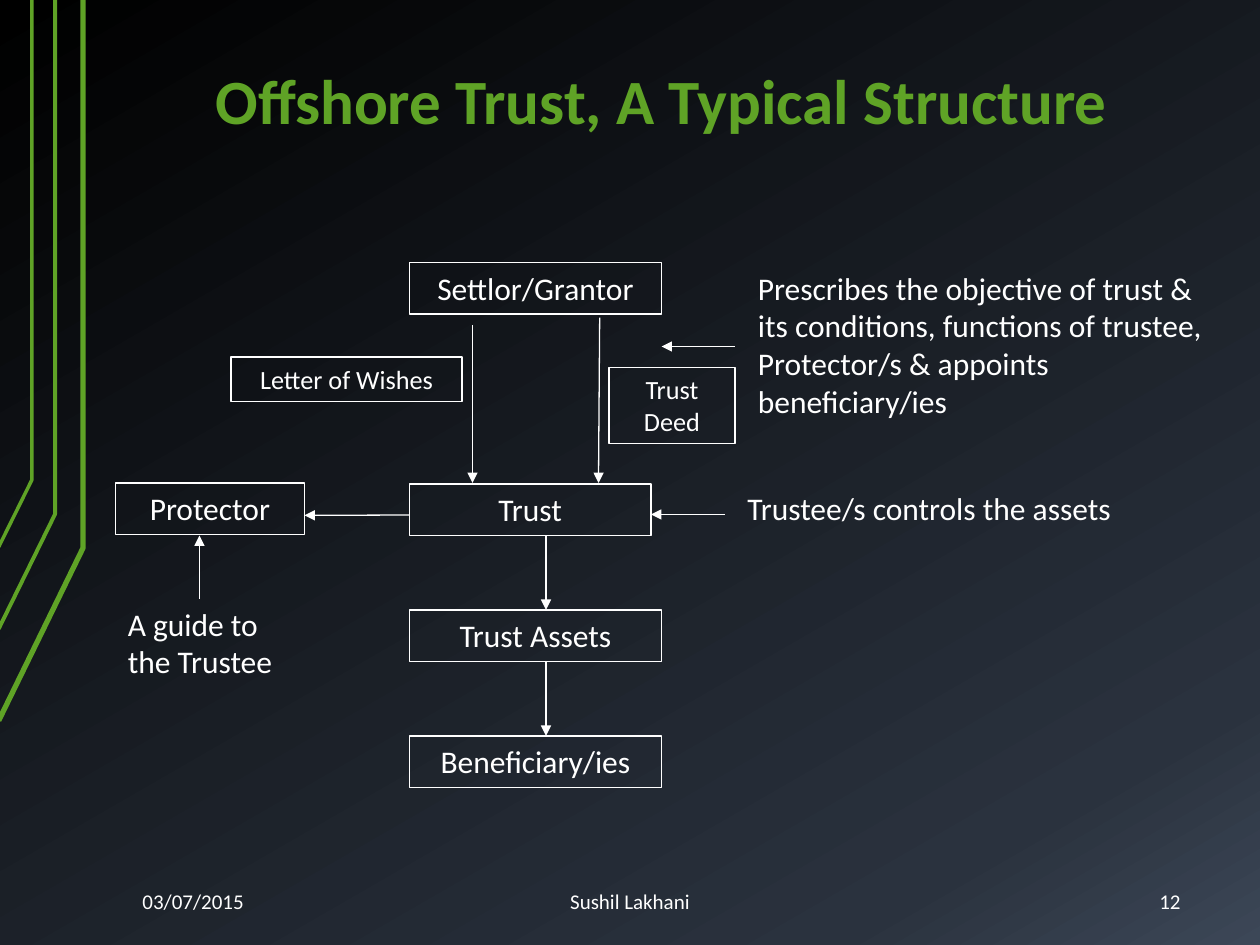
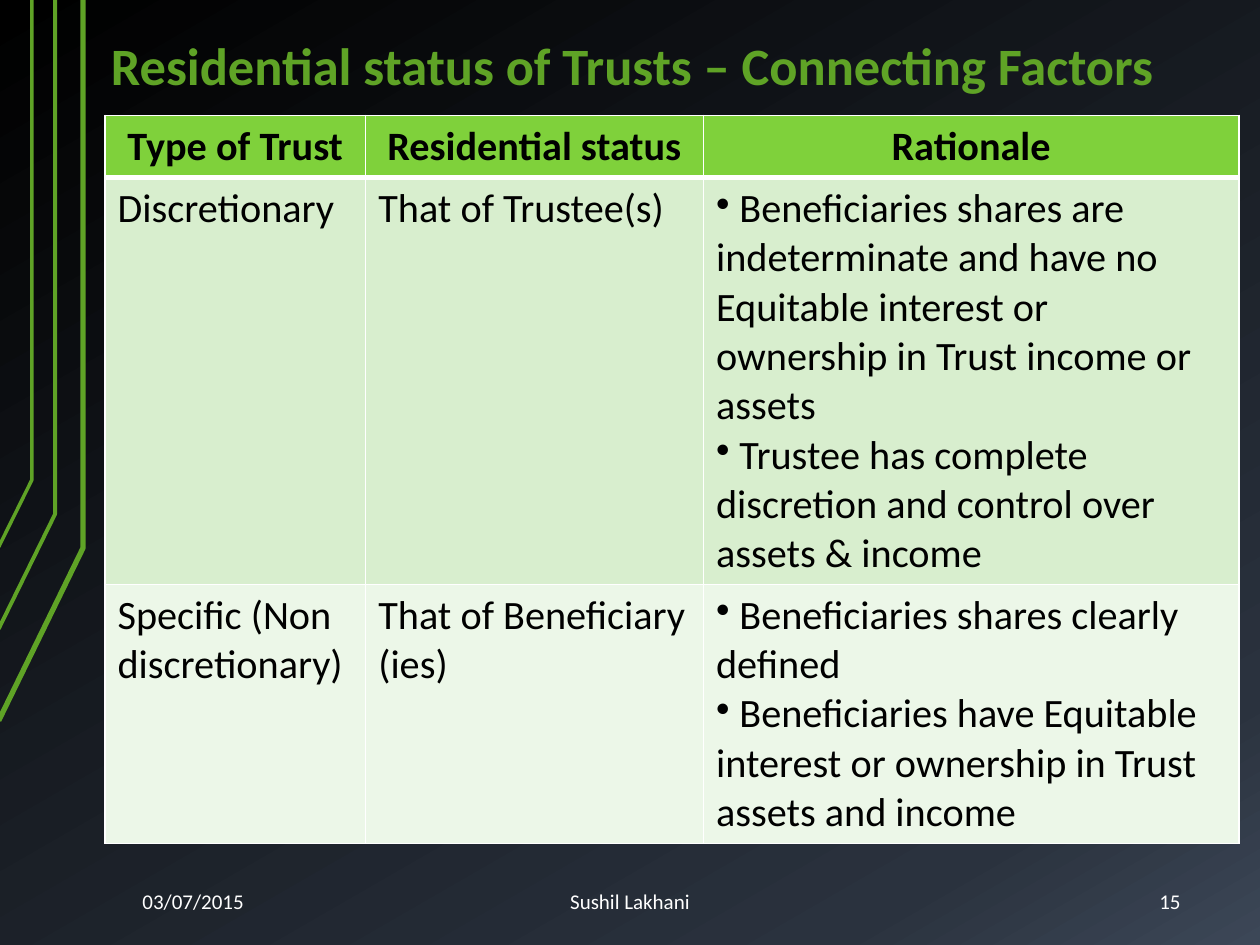
from lxml import etree
from pptx import Presentation
from pptx import util as u
from pptx.dml import color as dml
from pptx.enum import shapes, text
from pptx.oxml import ns

COLORS = {
    "green": "5FA326", "white": "FFFFFF", "black": "000000",
    "slate": "2A323E", "steel": "3C4757",
    "header": "7FD13B", "row_dark": "D8EECE", "row_light": "ECF7E8",
}
FONT = "Calibri"
LEFT, CENTER, RIGHT = text.PP_ALIGN.LEFT, text.PP_ALIGN.CENTER, text.PP_ALIGN.RIGHT
TOP, MIDDLE, BOTTOM = text.MSO_ANCHOR.TOP, text.MSO_ANCHOR.MIDDLE, text.MSO_ANCHOR.BOTTOM


def format_paragraph(paragraph, size, color="white", align=LEFT, bold=False):
    paragraph.alignment = align
    for run in paragraph.runs:
        run.font.name = FONT
        run.font.size = u.Pt(size)
        run.font.bold = bold
        run.font.color.rgb = dml.RGBColor.from_string(COLORS[color])


def add_text(slide, area, words, size, align=LEFT, anchor=TOP, color="white",
             bold=False, insets=(7.2, 3.6), outlined=False):
    area = [u.Pt(length) for length in area]
    if outlined:
        shape = slide.shapes.add_shape(shapes.MSO_SHAPE.RECTANGLE, *area)
        shape.shadow.inherit = False
        shape.fill.background()
        shape.line.color.rgb = dml.RGBColor.from_string(COLORS["white"])
        shape.line.width = u.Pt(0.75)
    else:
        shape = slide.shapes.add_textbox(*area)
    frame = shape.text_frame
    frame.word_wrap = True
    frame.vertical_anchor = anchor
    frame.margin_left = frame.margin_right = u.Pt(insets[0])
    frame.margin_top = frame.margin_bottom = u.Pt(insets[1])
    frame.text = words
    format_paragraph(frame.paragraphs[0], size, color, align, bold)
    return shape


presentation = Presentation()
presentation.slide_width = u.Pt(720)
presentation.slide_height = u.Pt(540)

gradient_stops = [(0, "black"), (0.85, "slate"), (1, "steel")]
corner_lines = [
    (3, [(-0.7, 411.8), (47.5, 313.2), (47.5, 0)]),
    (2.25, [(-0.7, 359.3), (31.5, 293.8), (31.5, 0)]),
    (2, [(-0.7, 312.5), (18.2, 274.3), (18.2, 0)]),
]
titles = [
    ("Offshore Trust, A Typical Structure", (72, 21.6, 612, 62.6), 36, CENTER, "12"),
    ("Residential status of Trusts – Connecting Factors", (54, 12.2, 654, 48.2), 30, LEFT, "15"),
]
wide_insets = (9.4, 5)

for title, title_area, title_size, title_align, number in titles:
    slide = presentation.slides.add_slide(presentation.slide_layouts[6])
    fill = slide.background.fill
    fill.gradient()
    fill.gradient_angle = 300
    stop_list = slide.element.find(".//" + ns.qn("a:gsLst"))
    for stop in list(stop_list):
        stop_list.remove(stop)
    for position, name in gradient_stops:
        stop = etree.SubElement(stop_list, ns.qn("a:gs"), pos=str(int(position * 100000)))
        etree.SubElement(stop, ns.qn("a:srgbClr"), val=COLORS[name])

    for width, points in corner_lines:
        points = [(u.Pt(x), u.Pt(y)) for x, y in points]
        builder = slide.shapes.build_freeform(*points[0])
        builder.add_line_segments(points[1:], close=False)
        corner_line = builder.convert_to_shape()
        corner_line.shadow.inherit = False
        corner_line.fill.background()
        corner_line.line.color.rgb = dml.RGBColor.from_string(COLORS["green"])
        corner_line.line.width = u.Pt(width)

    heading = add_text(slide, title_area, title, title_size, title_align, BOTTOM,
                       "green", True, wide_insets)
    heading.text_frame.paragraphs[0].line_spacing = 0.9
    for left, width, words, align in [
        (72, 132, "03/07/2015", LEFT),
        (204, 312, "Sushil Lakhani", CENTER),
        (624, 60, number, RIGHT),
    ]:
        add_text(slide, (left, 500.5, width, 28.8), words, 12, align, MIDDLE,
                 insets=wide_insets)

structure_slide, status_slide = presentation.slides

boxes = [
    ("Settlor/Grantor", (234, 150, 144, 29.5), 18),
    ("Trust", (234, 276.5, 138, 29.5), 18),
    ("Trust Assets", (234, 348.5, 144, 29.5), 18),
    ("Beneficiary/ies", (234, 420.5, 144, 29.5), 18),
    ("Protector", (66, 276, 108, 29.5), 18),
    ("Letter of Wishes", (132, 204, 132, 25.5), 15),
    ("Trust Deed", (348, 210, 72, 43.5), 15),
]
for words, area, size in boxes:
    add_text(structure_slide, area, words, size, CENTER, outlined=True)

notes = [
    ("Prescribes the objective of trust & its conditions, functions of trustee, "
     "Protector/s & appoints beneficiary/ies", (426, 150, 276, 93.6)),
    ("Trustee/s controls the assets", (420, 276, 276, 28.8)),
    ("A guide to the Trustee", (66, 342, 108, 50.4)),
]
for words, area in notes:
    add_text(structure_slide, area, words, 18)

arrows = [
    (270, 186, 270, 276), (342.7, 181.5, 342, 276),
    (312, 306.5, 312, 348.5), (312, 378.5, 312, 420.5),
    (234, 294.3, 174, 294.5), (420, 198, 378, 198),
    (414, 294, 372, 294), (114, 342, 114, 306),
]
for ends in arrows:
    arrow = structure_slide.shapes.add_connector(
        shapes.MSO_CONNECTOR.STRAIGHT, *[u.Pt(length) for length in ends])
    arrow.line.color.rgb = dml.RGBColor.from_string(COLORS["white"])
    arrow.line.width = u.Pt(0.75)
    etree.SubElement(arrow.line._get_or_add_ln(), ns.qn("a:tailEnd"), type="triangle")
    etree.SubElement(arrow.element.spPr, ns.qn("a:effectLst"))

rows = [
    (35.5, "header", [["Type of Trust"], ["Residential status"], ["Rationale"]]),
    (232.5, "row_dark", [
        ["Discretionary"],
        ["That of Trustee(s)"],
        [" Beneficiaries shares are indeterminate and have no Equitable interest "
         "or ownership in Trust income or assets",
         " Trustee has complete discretion and control over assets & income"],
    ]),
    (148, "row_light", [
        ["Specific (Non discretionary)"],
        ["That of Beneficiary (ies)"],
        [" Beneficiaries shares clearly defined",
         " Beneficiaries have Equitable interest or ownership in Trust assets and income"],
    ]),
]
table = status_slide.shapes.add_table(
    3, 3, u.Pt(60), u.Pt(66), u.Pt(648), u.Pt(416)).table
for column, width in zip(table.columns, (149, 193, 306)):
    column.width = u.Pt(width)

for row_index, (height, fill_name, row) in enumerate(rows):
    table.rows[row_index].height = u.Pt(height)
    is_header = row_index == 0
    for column_index, lines in enumerate(row):
        cell = table.cell(row_index, column_index)
        frame = cell.text_frame
        frame.text = "\n".join(lines)
        for paragraph in frame.paragraphs:
            format_paragraph(paragraph, 23, "black", CENTER if is_header else LEFT, is_header)
            if len(lines) > 1:
                etree.SubElement(paragraph._p.get_or_add_pPr(), ns.qn("a:buChar"), char="•")
        properties = cell._tc.get_or_add_tcPr()
        for side in ("L", "R", "T", "B"):
            thick = (is_header and side == "B") or (row_index == 1 and side == "T")
            border = etree.SubElement(properties, ns.qn("a:ln" + side),
                                      w=str(u.Pt(3 if thick else 1)))
            solid = etree.SubElement(border, ns.qn("a:solidFill"))
            etree.SubElement(solid, ns.qn("a:srgbClr"), val=COLORS["white"])
        cell.fill.solid()
        cell.fill.fore_color.rgb = dml.RGBColor.from_string(COLORS[fill_name])

presentation.save("out.pptx")
